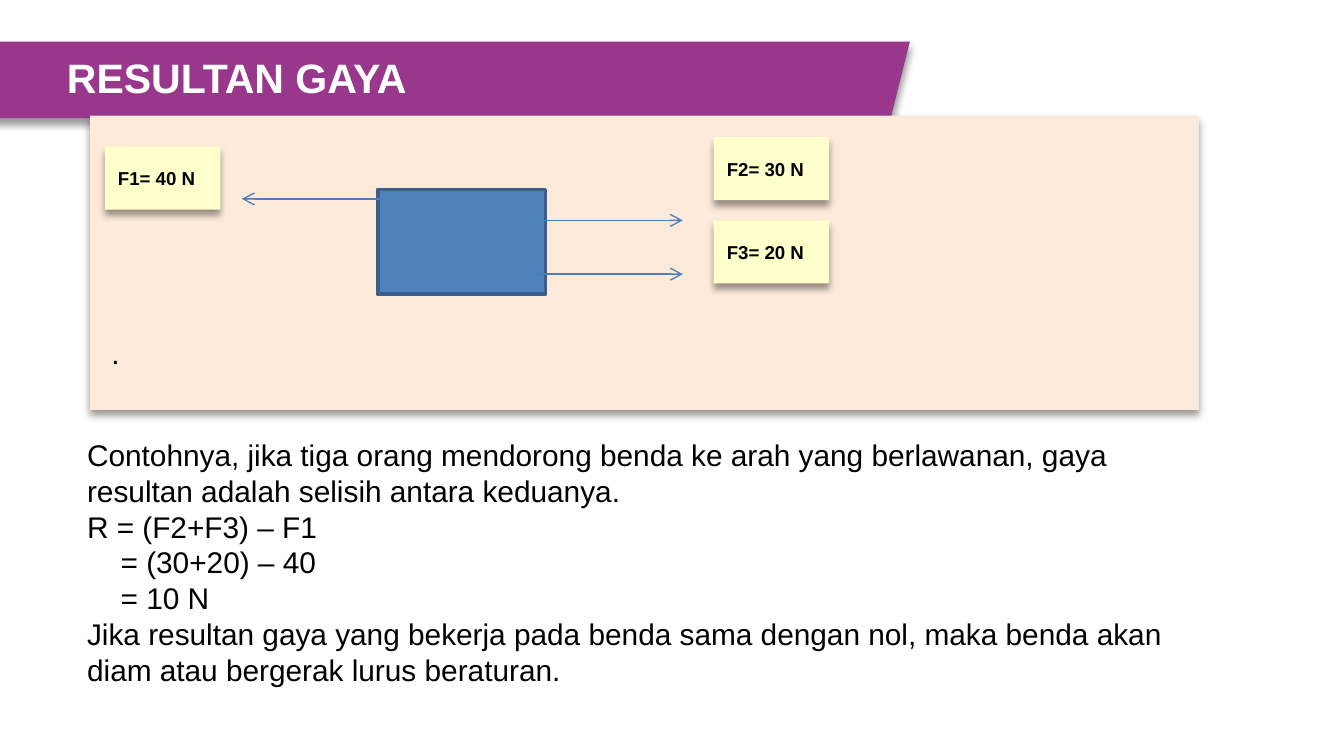
from dataclasses import dataclass

import pptx
import pptx.dml.color
import pptx.enum.shapes
import pptx.enum.text
import pptx.oxml
import pptx.oxml.ns
import pptx.util
from pptx.util import Inches

SHAPE = pptx.enum.shapes.MSO_SHAPE
ANCHOR = pptx.enum.text.MSO_ANCHOR
NAMESPACE = pptx.oxml.ns.nsdecls("a")


@dataclass(frozen=True)
class Theme:
    font: str = "Arial"
    banner: str = "99378D"
    panel: str = "FDEADA"
    label: str = "FFFFCC"
    block: str = "4F81BD"
    block_edge: str = "3A5F8C"
    arrow: str = "4B7EBC"
    text: str = "000000"
    title: str = "FFFFFF"
    title_size: int = 22
    body_size: int = 16
    label_size: int = 10


THEME = Theme()


def rgb(value):
    return pptx.dml.color.RGBColor.from_string(value)


def add_shadow(shape):
    """Give the shape a soft shadow that falls straight down."""
    shape._element.spPr.append(pptx.oxml.parse_xml(
        f'<a:effectLst {NAMESPACE}>'
        '<a:outerShdw blurRad="50800" dist="38100" dir="5400000" rotWithShape="0">'
        '<a:srgbClr val="000000"><a:alpha val="40000"/></a:srgbClr>'
        '</a:outerShdw></a:effectLst>'))


def add_box(slide, kind, box, fill, edge=None):
    """Add a filled shape: outlined if an edge colour is given, else shadowed."""
    shape = slide.shapes.add_shape(kind, *map(Inches, box))
    shape.fill.solid()
    shape.fill.fore_color.rgb = rgb(fill)
    if edge:
        shape.shadow.inherit = False
        shape.line.color.rgb = rgb(edge)
        shape.line.width = pptx.util.Pt(2)
    else:
        shape.line.fill.background()
        add_shadow(shape)
    return shape


def write(shape, lines, size, color=THEME.text, bold=False, anchor=ANCHOR.TOP):
    """Fill the shape with paragraphs given as (text, left indent in inches)."""
    frame = shape.text_frame
    frame.word_wrap = True
    frame.vertical_anchor = anchor
    for index, (text, indent) in enumerate(lines):
        paragraph = frame.add_paragraph() if index else frame.paragraphs[0]
        paragraph.text = text
        paragraph.alignment = pptx.enum.text.PP_ALIGN.LEFT
        paragraph._p.get_or_add_pPr().set("marL", str(Inches(indent)))
        paragraph.font.name = THEME.font
        paragraph.font.size = pptx.util.Pt(size)
        paragraph.font.bold = bold
        paragraph.font.color.rgb = rgb(color)


def add_text(slide, box, lines, size, **style):
    write(slide.shapes.add_textbox(*map(Inches, box)), lines, size, **style)


def add_arrow(slide, start, end):
    arrow = slide.shapes.add_connector(
        pptx.enum.shapes.MSO_CONNECTOR.STRAIGHT, *map(Inches, start + end))
    arrow.line.color.rgb = rgb(THEME.arrow)
    arrow.line.width = pptx.util.Pt(0.75)
    arrow.line._get_or_add_ln().append(
        pptx.oxml.parse_xml(f'<a:tailEnd {NAMESPACE} type="arrow"/>'))
    arrow._element.spPr.append(pptx.oxml.parse_xml(f'<a:effectLst {NAMESPACE}/>'))


def add_force_label(slide, text, left, top):
    label = add_box(slide, SHAPE.RECTANGLE, (left, top, 0.86, 0.47), THEME.label)
    write(label, [(text, 0)], THEME.label_size, bold=True, anchor=ANCHOR.MIDDLE)


def add_explanation(slide):
    add_text(slide, (0.55, 3.2, 8.44, 2.52), [
        ("Contohnya, jika tiga orang mendorong benda ke arah yang berlawanan, "
         "gaya resultan adalah selisih antara keduanya.", 0),
        ("R = (F2+F3) – F1", 0),
        ("= (30+20) – 40", 0.25),
        ("= 10 N", 0.25),
        ("Jika resultan gaya yang bekerja pada benda sama dengan nol, "
         "maka benda akan diam atau bergerak lurus beraturan.", 0),
    ], THEME.body_size)


def add_title(slide):
    add_box(slide, SHAPE.PARALLELOGRAM, (-0.23, 0.31, 7, 0.57), THEME.banner)
    add_text(slide, (0.4, 0.34, 9.35, 0.47), [("RESULTAN GAYA", 0)],
             THEME.title_size, color=THEME.title, bold=True)


def add_force_diagram(slide):
    panel = add_box(slide, SHAPE.RECTANGLE, (0.67, 0.86, 8.25, 2.19), THEME.panel)
    write(panel, [(".", 0.06)], THEME.body_size, anchor=ANCHOR.BOTTOM)
    panel.text_frame.margin_bottom = Inches(0.29)

    add_box(slide, SHAPE.RECTANGLE, (2.81, 1.41, 1.25, 0.78),
            THEME.block, THEME.block_edge)
    add_arrow(slide, (2.89, 1.48), (1.8, 1.48))
    for height in (1.64, 2.04):
        add_arrow(slide, (3.98, height), (5.08, height))

    for text, left, top in (("F1= 40 N", 0.78, 1.09),
                            ("F2= 30 N", 5.31, 1.02),
                            ("F3= 20 N", 5.31, 1.64)):
        add_force_label(slide, text, left, top)


def main():
    presentation = pptx.Presentation()
    presentation.slide_width = Inches(10)
    presentation.slide_height = presentation.slide_width * 9 // 16
    slide = presentation.slides.add_slide(presentation.slide_layouts[6])
    add_explanation(slide)
    add_title(slide)
    add_force_diagram(slide)
    presentation.save("out.pptx")


if __name__ == "__main__":
    main()
